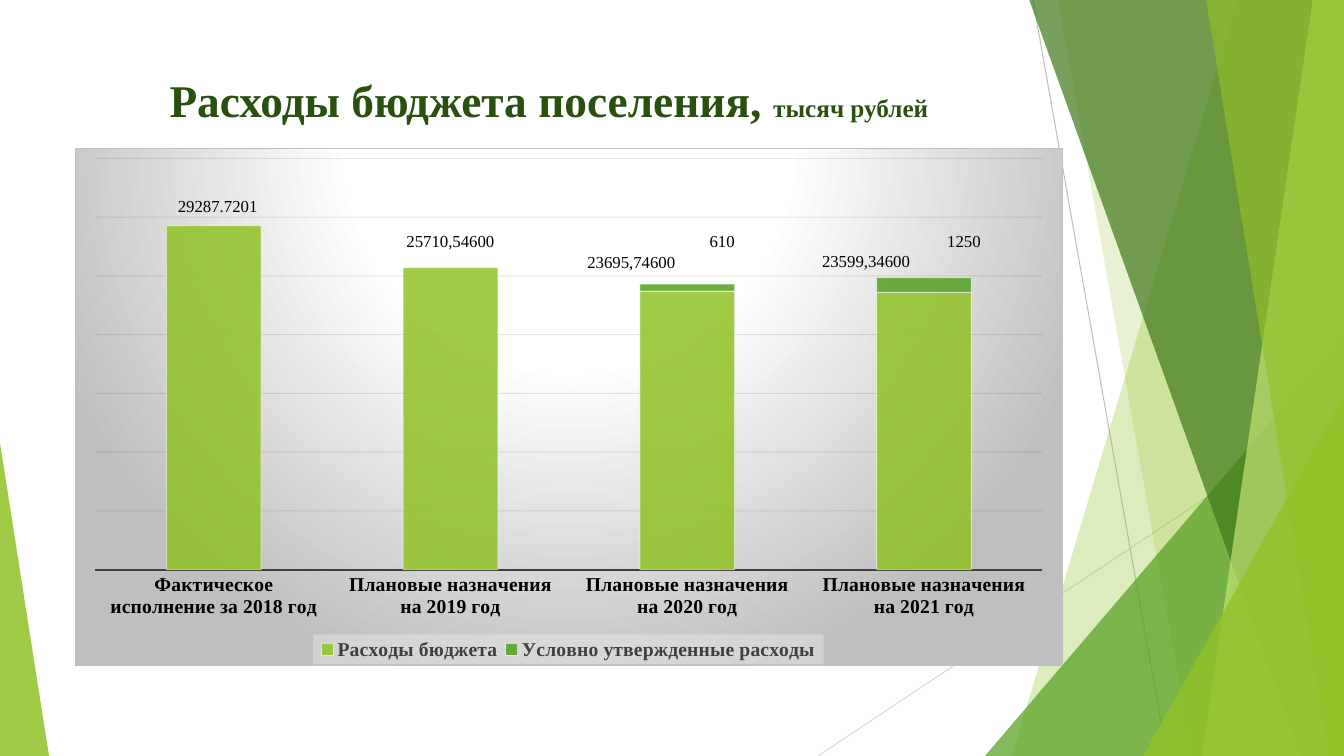
from lxml import etree
from pptx import Presentation
from pptx.chart.data import CategoryChartData
from pptx.dml.color import RGBColor
from pptx.enum import chart as ch, shapes, text
from pptx.oxml import ns, parse_xml
from pptx.util import Pt

PX = 12192000 / 1344
WIDE, HIGH = 1344, 756
SERIF = "Times New Roman"
HEX = {
    "lime": "90C226", "green": "54A021", "dark": "3F7819", "pale": "C0E474",
    "title": "2A5010", "black": "000000", "white": "FFFFFF", "axis": "404040",
    "grid": "0D0D0D", "grey": "BFBFBF", "silver": "D9D9D9", "mist": "F2F2F2",
}

# Start x, start y, end x, end y, colour
LINES = [(1033, 0, 1167, 756, "grey"), (1344, 406, 818, 756, "silver")]
# Bands: top x, foot x. Triangles: left, top, width, height, apex
DECOR = [
    ("band", (1238, 1012), "lime", 30),
    ("band", (1058, 1192), "lime", 20),
    ("tri", (985, 336, 359, 420, 1), "green", 72),
    ("band", (1029, 1301), "dark", 70),
    ("band", (1313, 1202), "pale", 70),
    ("band", (1206, 1329), "lime", 65),
    ("tri", (1143, 396, 201, 360, 1), "lime", 80),
    ("tri", (0, 443, 49, 313, 0), "lime", 85),
]
TITLE = [("Расходы бюджета поселения, ", 32.4), ("тысяч рублей", 18)]
TITLE_BOX = (75, 66, 948, 67)
FRAME = (75, 148, 988, 518)
PLOT = (20, 10, 948, 412)
KEY = (238, 488, 511, 30)
CATS = ["Фактическое исполнение за 2018 год", "Плановые назначения на 2019 год",
        "Плановые назначения на 2020 год", "Плановые назначения на 2021 год"]
# Labels: point, text (None shows the value), shift from the bar centre
SERIES = [
    ("Расходы бюджета", [29287.7201, 25710.546, 23695.746, 23599.346], "lime",
     [(0, None, 4, -191), (1, "25710,54600", 0, -177),
      (2, "23695,74600", -56, -168), (3, "23599,34600", -58, -170)]),
    ("Условно утвержденные расходы", [None, None, 610, 1250], "green",
     [(2, "610", 35, -46), (3, "1250", 40, -43)]),
]


def emu(*vals):
    return [round(v * PX) for v in vals]


def rgb(name):
    return RGBColor.from_string(HEX[name])


def style(font, size, color, bold=False, name=SERIF):
    for key, val in {"name": name, "size": Pt(size), "bold": bold}.items():
        setattr(font, key, val)
    font.color.rgb = rgb(color)


def fade(node, *alphas):
    """Give the colours inside node their opacity in percent, in order."""
    for clr, pct in zip(list(node.iter(ns.qn("a:srgbClr"))), alphas):
        etree.SubElement(clr, ns.qn("a:alpha")).set("val", str(pct * 1000))


def paint(fill, color):
    fill.solid()
    fill.fore_color.rgb = rgb(color)


def stroke(line, color, width=0.75):
    paint(line.fill, color)
    line.width = Pt(width)


def place(node, spot, box, kind=""):
    """Set a manual layout, as shares of the chart frame."""
    for old in node.findall(ns.qn("c:layout")):
        node.remove(old)
    mode = "" if kind == "shift" else '<c:xMode val="edge"/><c:yMode val="edge"/>'
    inner = '<c:layoutTarget val="inner"/>' if kind == "inner" else ""
    sizes = "".join(f'<c:{tag} val="{val / FRAME[2 + i % 2]:.4f}"/>'
                    for i, (tag, val) in enumerate(zip("xywh", box)))
    node.insert(spot, parse_xml(
        f'<c:layout {ns.nsdecls("c")}><c:manualLayout>{inner}{mode}{sizes}'
        '</c:manualLayout></c:layout>'))


def backdrop(body):
    return parse_xml(f'<c:spPr {ns.nsdecls("c", "a")}>{body}</c:spPr>')


def solid(color, alpha=100):
    return (f'<a:solidFill><a:srgbClr val="{HEX[color]}">'
            f'<a:alpha val="{alpha * 1000}"/></a:srgbClr></a:solidFill>')


def hide_leaders(node):
    """Turn off the lines that join moved labels to their bars."""
    for flag in node.findall(ns.qn("c:showLeaderLines")):
        flag.set("val", "0")
    node.append(parse_xml(
        f'<c:extLst {ns.nsdecls("c")}>'
        '<c:ext uri="{CE6537A1-D6FC-4f65-9D91-7224C49458BB}" '
        'xmlns:c15="http://schemas.microsoft.com/office/drawing/2012/chart">'
        '<c15:showLeaderLines val="0"/></c:ext></c:extLst>'))


def draw_decor(slide):
    for *ends, color in LINES:
        line = slide.shapes.add_connector(shapes.MSO_CONNECTOR.STRAIGHT, *emu(*ends))
        stroke(line.line, color)
        etree.SubElement(line._element.spPr, ns.qn("a:effectLst"))
    for kind, geo, color, alpha in DECOR:
        if kind == "band":
            top, foot = geo
            pen = slide.shapes.build_freeform(top, -1, PX)
            pen.add_line_segments([(WIDE, -1), (WIDE, HIGH), (foot, HIGH)])
            shape = pen.convert_to_shape()
        else:
            *box, apex = geo
            shape = slide.shapes.add_shape(
                shapes.MSO_SHAPE.ISOSCELES_TRIANGLE, *emu(*box))
            shape.adjustments[0] = apex
        paint(shape.fill, color)
        fade(shape._element.spPr, alpha)
        shape.line.fill.background()
        shape.shadow.inherit = False


def draw_title(slide):
    frame = slide.shapes.add_textbox(*emu(*TITLE_BOX)).text_frame
    frame.word_wrap = True
    frame.vertical_anchor = text.MSO_ANCHOR.MIDDLE
    para = frame.paragraphs[0]
    para.alignment = text.PP_ALIGN.CENTER
    for words, size in TITLE:
        run = para.add_run()
        run.text = words
        style(run.font, size, "title", True)


def draw_bars(series, color, labels):
    paint(series.format.fill, color)
    stroke(series.format.line, "white")
    fade(series._element, 85, 50)
    tags = series.data_labels
    tags.show_value = True
    tags.position = ch.XL_LABEL_POSITION.CENTER
    style(tags.font, 12, "black")
    for idx, words, *shift in labels:
        tag = series.points[idx].data_label
        if words:
            run = tag.text_frame.paragraphs[0].add_run()
            run.text = words
            style(run.font, 12, "black")
        else:
            style(tag.font, 12, "black")
        tag.position = ch.XL_LABEL_POSITION.CENTER
        place(tag._get_or_add_dLbl(), 1, shift, "shift")
    hide_leaders(tags._element)


def draw_chart(slide):
    data = CategoryChartData()
    data.categories = CATS
    for name, vals, *_ in SERIES:
        data.add_series(name, vals)
    chart = slide.shapes.add_chart(
        ch.XL_CHART_TYPE.COLUMN_STACKED, *emu(*FRAME), data).chart
    chart.has_title = False
    style(chart.font, 10, "black", name="Cabin")
    stops = "".join(f'<a:gs pos="{pos * 1000}"><a:srgbClr val="{HEX[color]}"/></a:gs>'
                    for pos, color in ((0, "white"), (39, "white"), (100, "grey")))
    space = chart._chartSpace
    space.find(ns.qn("c:chart")).addnext(backdrop(
        f'<a:gradFill><a:gsLst>{stops}</a:gsLst><a:path path="circle">'
        '<a:fillToRect l="50000" t="-80000" r="50000" b="180000"/></a:path>'
        f'</a:gradFill><a:ln w="9525">{solid("grey")}</a:ln>'))
    place(next(space.iter(ns.qn("c:plotArea"))), 0, PLOT, "inner")

    plot = chart.plots[0]
    for key, val in {"gap_width": 150, "overlap": 100, "vary_by_categories": False}.items():
        setattr(plot, key, val)
    for series, (_, _, color, labels) in zip(plot.series, SERIES):
        draw_bars(series, color, labels)

    cat, val = chart.category_axis, chart.value_axis
    cat.major_tick_mark = ch.XL_TICK_MARK.NONE
    style(cat.tick_labels.font, 14, "black", True)
    stroke(cat.format.line, "axis", 1.5)
    for key, num in {"minimum_scale": 0, "maximum_scale": 35000, "major_unit": 5000,
                     "has_major_gridlines": True, "visible": False}.items():
        setattr(val, key, num)
    stroke(val.major_gridlines.format.line, "grid")
    fade(val._element.find(ns.qn("c:majorGridlines")), 10)

    chart.has_legend = True
    key = chart.legend
    key.position = ch.XL_LEGEND_POSITION.BOTTOM
    key.include_in_layout = False
    style(key.font, 14, "axis", True)
    key._element.find(ns.qn("c:txPr")).addprevious(backdrop(solid("mist", 39)))
    place(key._element, 1, KEY)


def main():
    deck = Presentation()
    deck.slide_width, deck.slide_height = emu(WIDE, HIGH)
    slide = deck.slides.add_slide(deck.slide_layouts[6])
    draw_decor(slide)
    draw_title(slide)
    draw_chart(slide)
    deck.save("out.pptx")


if __name__ == "__main__":
    main()
